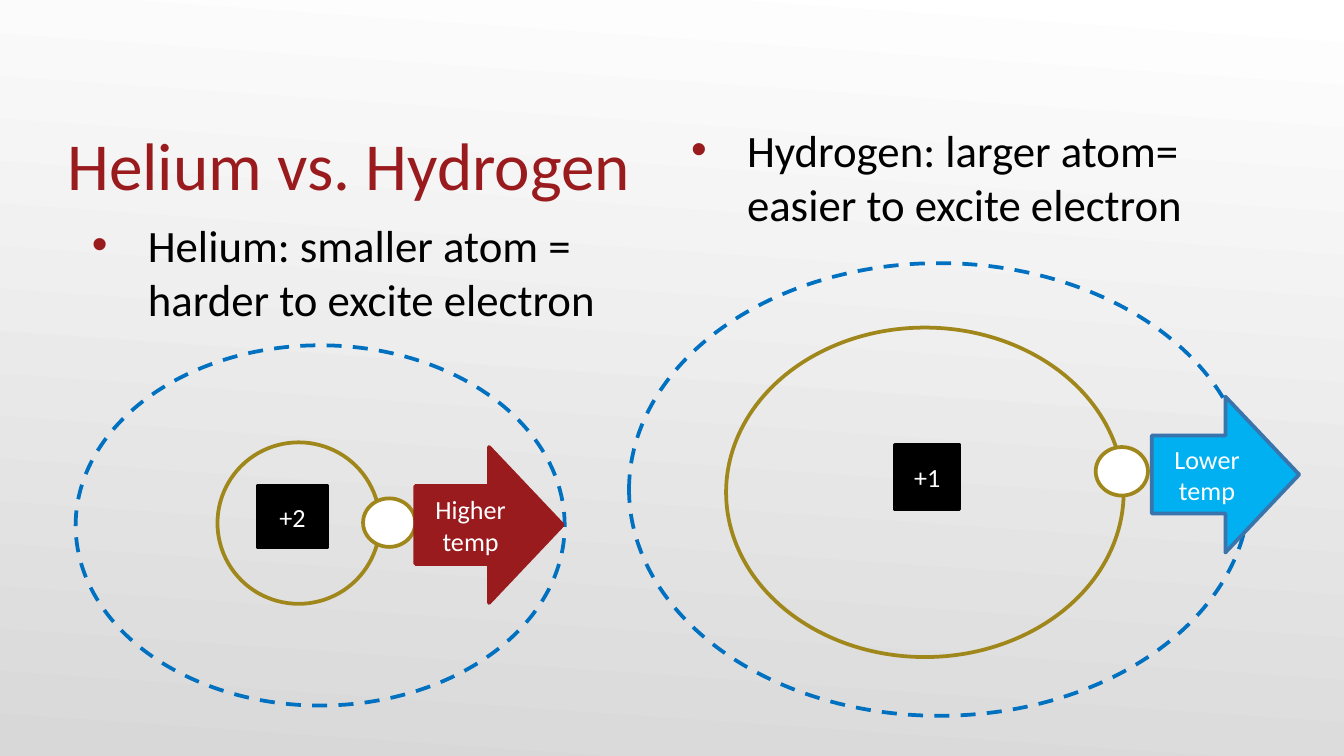
"""Build a slide comparing electron excitation in helium and hydrogen."""
from lxml import etree
from pptx import Presentation
from pptx.dml.color import RGBColor
from pptx.enum.dml import MSO_LINE
from pptx.enum.shapes import MSO_SHAPE as Shape
from pptx.enum.text import MSO_ANCHOR as Anchor, MSO_AUTO_SIZE as AutoSize, PP_ALIGN as Align
from pptx.oxml.ns import qn
from pptx.util import Pt

COLORS = {
    "red": "991B1E", "gold": "A0871B", "blue": "0070C0", "sky": "00B0F0",
    "steel": "3974AD", "black": "000000", "white": "FFFFFF", "gray": "D8D8D8",
}


class AtomSlide:
    font = "Calibri"
    line_width = 2

    def __init__(self, slide):
        self.slide = slide

    def color(self, name):
        return RGBColor.from_string(COLORS[name])

    def background(self, top, bottom, angle):
        fill = self.slide.background.fill
        fill.gradient()
        fill.gradient_angle = 360 - angle
        for stop, name, position in zip(fill.gradient_stops, (top, bottom), (0, 1)):
            stop.color.rgb = self.color(name)
            stop.position = position

    def style(self, paragraph, size, color, align):
        paragraph.alignment = align
        paragraph.space_before = Pt(0)
        for run in paragraph.runs:
            run.font.name = self.font
            run.font.size = Pt(size)
            run.font.color.rgb = self.color(color)

    def placeholder(self, holder, box, text, size, color, anchor, side_inset):
        holder.left, holder.top, holder.width, holder.height = map(Pt, box)
        frame = holder.text_frame
        frame.text = text
        frame.word_wrap = True
        frame.auto_size = AutoSize.NONE
        frame.vertical_anchor = anchor
        frame.margin_left = frame.margin_right = Pt(side_inset)
        self.style(frame.paragraphs[0], size, color, Align.LEFT)
        return frame

    def title(self, box, text):
        frame = self.placeholder(self.slide.shapes.title, box, text, 36, "red", Anchor.BOTTOM, 0)
        frame.margin_bottom = 0

    def bullet(self, index, box, text):
        holder = self.slide.placeholders[index]
        frame = self.placeholder(holder, box, text, 24, "black", Anchor.TOP, 7.2)
        properties = frame.paragraphs[0]._p.get_or_add_pPr()
        properties.set("marL", str(Pt(36)))
        properties.set("indent", str(Pt(-30)))
        bullet_color = etree.SubElement(properties, qn("a:buClr"))
        etree.SubElement(bullet_color, qn("a:srgbClr"), val=COLORS["red"])
        etree.SubElement(properties, qn("a:buChar"), char="•")

    def shape(self, kind, box, line, fill=None, text="", dashed=False):
        part = self.slide.shapes.add_shape(kind, *map(Pt, box))
        part.shadow.inherit = False
        part.line.color.rgb = self.color(line)
        part.line.width = Pt(self.line_width)
        if dashed:
            part.line.dash_style = MSO_LINE.DASH
        if fill:
            part.fill.solid()
            part.fill.fore_color.rgb = self.color(fill)
        else:
            part.fill.background()
        if text:
            frame = part.text_frame
            frame.text = text
            frame.word_wrap = True
            frame.vertical_anchor = Anchor.MIDDLE
            self.style(frame.paragraphs[0], 14, "white", Align.CENTER)

    def atom(self, shell, nucleus, charge, electron, excited, arrow, label, fill, line):
        self.shape(Shape.OVAL, shell, "gold")
        self.shape(Shape.RECTANGLE, nucleus, "black", "black", charge)
        self.shape(Shape.OVAL, (*electron, 28, 26), "gold", "white")
        self.shape(Shape.OVAL, excited, "blue", dashed=True)
        self.shape(Shape.RIGHT_ARROW, (*arrow, 79, 83.5), line, fill, label)


def main():
    deck = Presentation()
    deck.slide_width, deck.slide_height = Pt(720), Pt(405)
    page = AtomSlide(deck.slides.add_slide(deck.slide_layouts[3]))
    page.background("white", "gray", 94)
    page.title((36, 42, 648, 67.5), "Helium vs. Hydrogen")
    page.bullet(1, (36, 113, 318, 262), "Helium: smaller atom = harder to excite electron")
    page.bullet(2, (357, 62, 332.5, 250), "Hydrogen: larger atom= easier to excite electron")
    page.atom(
        shell=(116.5, 237, 87, 86.5), nucleus=(138, 260.5, 37.5, 32.5), charge="+2",
        electron=(194.5, 267), excited=(40.5, 185, 262, 193),
        arrow=(222.5, 239.5), label="Higher temp", fill="red", line="red",
    )
    page.atom(
        shell=(389, 175.5, 213, 176.5), nucleus=(479.5, 238.5, 34.5, 34.5), charge="+1",
        electron=(587, 239.5), excited=(337, 141, 332.5, 242.5),
        arrow=(617, 212.5), label="Lower temp", fill="sky", line="steel",
    )
    for holder in list(page.slide.placeholders):
        if not holder.text_frame.text:
            holder.element.getparent().remove(holder.element)
    deck.save("out.pptx")


if __name__ == "__main__":
    main()
